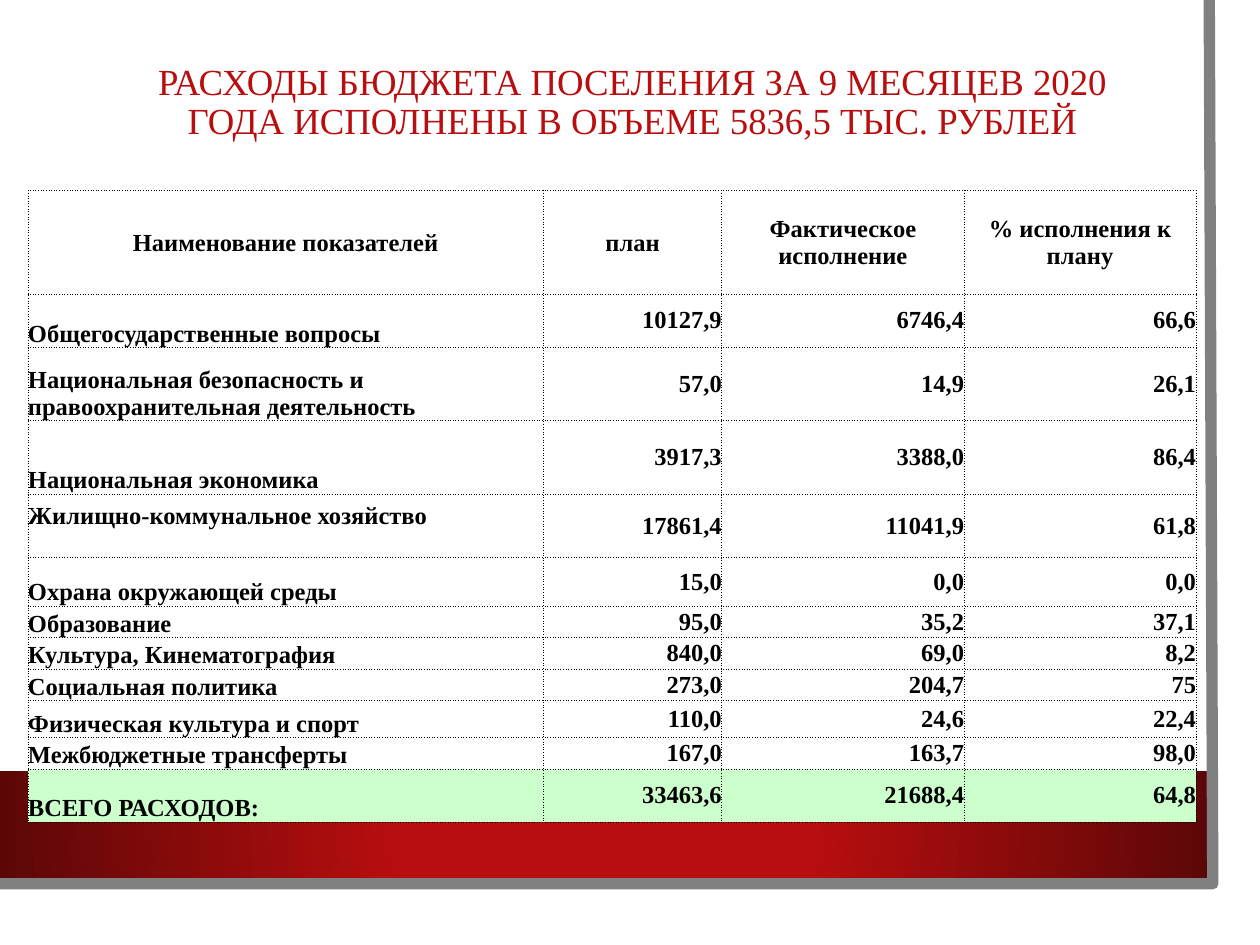
import pptx
import pptx.dml.color
import pptx.enum.shapes
import pptx.enum.text
import pptx.oxml
import pptx.oxml.ns
import pptx.util

Pt = pptx.util.Pt
ALIGN = pptx.enum.text.PP_ALIGN
ANCHOR = pptx.enum.text.MSO_ANCHOR
RECTANGLE = pptx.enum.shapes.MSO_SHAPE.RECTANGLE
NAMESPACE = pptx.oxml.ns.nsdecls("a")
FONT = "Times New Roman"
RED, DARK_RED, GREEN = "B80E0F", "5C0707", "CCFFCC"

TITLE = "РАСХОДЫ БЮДЖЕТА ПОСЕЛЕНИЯ ЗА 9 МЕСЯЦЕВ 2020 ГОДА ИСПОЛНЕНЫ В ОБЪЕМЕ 5836,5 ТЫС. РУБЛЕЙ"
COLUMN_WIDTHS = [294.5, 102, 138.5, 132.5]
HEADER_HEIGHT = 59
HEADER = ["Наименование показателей", "план", "Фактическое исполнение", "% исполнения к плану"]
EXPENSES = [
    (30.5, "Общегосударственные вопросы", "10127,9", "6746,4", "66,6"),
    (42, "Национальная безопасность и правоохранительная деятельность", "57,0", "14,9", "26,1"),
    (42, "Национальная экономика", "3917,3", "3388,0", "86,4"),
    (36, "Жилищно-коммунальное хозяйство", "17861,4", "11041,9", "61,8"),
    (28, "Охрана окружающей среды", "15,0", "0,0", "0,0"),
    (18, "Образование", "95,0", "35,2", "37,1"),
    (18, "Культура, Кинематография", "840,0", "69,0", "8,2"),
    (18, "Социальная политика", "273,0", "204,7", "75"),
    (21, "Физическая культура и спорт", "110,0", "24,6", "22,4"),
    (18, "Межбюджетные трансферты", "167,0", "163,7", "98,0"),
    (30.5, "ВСЕГО РАСХОДОВ:", "33463,6", "21688,4", "64,8"),
]
RAISED_LABEL = "Жилищно-коммунальное хозяйство"


def color(value):
    return pptx.dml.color.RGBColor.from_string(value)


def write(frame, text, size, text_color, align, bold=False):
    para = frame.paragraphs[0]
    para.alignment = align
    span = para.add_run()
    span.text = text
    span.font.name = FONT
    span.font.size = Pt(size)
    span.font.bold = bold
    span.font.color.rgb = color(text_color)
    return para


def set_margins(target, side, bottom):
    target.margin_left = target.margin_right = target.margin_top = Pt(side)
    target.margin_bottom = Pt(bottom)


def add_rectangle(page, left, top, width, height, fill):
    box = page.shapes.add_shape(RECTANGLE, Pt(left), Pt(top), Pt(width), Pt(height))
    box.shadow.inherit = False
    box.line.fill.background()
    box.fill.solid()
    box.fill.fore_color.rgb = color(fill)
    return box


def fill_radial(box, center, edge):
    """Replace the solid fill with a gradient that darkens away from the middle."""
    gradient = pptx.oxml.parse_xml(
        f'<a:gradFill {NAMESPACE} rotWithShape="1"><a:gsLst>'
        f'<a:gs pos="34000"><a:srgbClr val="{center}"/></a:gs>'
        f'<a:gs pos="100000"><a:srgbClr val="{edge}"/></a:gs></a:gsLst>'
        '<a:path path="circle"><a:fillToRect l="50000" t="50000" r="50000" b="50000"/></a:path>'
        '</a:gradFill>')
    properties = box.element.spPr
    solid = properties.find(pptx.oxml.ns.qn("a:solidFill"))
    properties.replace(solid, gradient)


def add_backdrop(page, left, top, width, height):
    add_rectangle(page, left, top, width, height, "FFFFFF")
    band = add_rectangle(page, left, top + 440.6, width - 16.6, 61.2, RED)
    fill_radial(band, RED, DARK_RED)
    builder = page.shapes.build_freeform(left + 691.2, top, scale=12700)
    builder.add_line_segments([(left + 692.6, top + 505.4), (left - 1.4, top + 504.7)], close=False)
    edge = builder.convert_to_shape()
    edge.shadow.inherit = False
    edge.fill.background()
    edge.line.color.rgb = color("808080")
    edge.line.width = Pt(6.5)


def add_title(page, left, top, width, height):
    box = page.shapes.add_textbox(Pt(left), Pt(top), Pt(width), Pt(height))
    frame = box.text_frame
    frame.word_wrap = True
    frame.vertical_anchor = ANCHOR.MIDDLE
    write(frame, TITLE, 21, RED, ALIGN.CENTER).line_spacing = 0.9


def style_cell(cell, fill=None):
    """Give a cell dotted borders on all sides and the given fill, or none."""
    for side in "LRTB":
        cell._tc.get_or_add_tcPr().append(pptx.oxml.parse_xml(
            f'<a:ln{side} {NAMESPACE} w="6350"><a:solidFill><a:srgbClr val="000000"/></a:solidFill>'
            f'<a:prstDash val="sysDot"/></a:ln{side}>'))
    if fill:
        cell.fill.solid()
        cell.fill.fore_color.rgb = color(fill)
    else:
        cell.fill.background()


def add_expense_table(page, left, top):
    heights = [HEADER_HEIGHT] + [expense[0] for expense in EXPENSES]
    table = page.shapes.add_table(len(heights), len(COLUMN_WIDTHS), Pt(left), Pt(top),
                                  Pt(sum(COLUMN_WIDTHS)), Pt(sum(heights))).table
    table.first_row = table.horz_banding = False
    for column, width in zip(table.columns, COLUMN_WIDTHS):
        column.width = Pt(width)
    for row, height in zip(table.rows, heights):
        row.height = Pt(height)

    for cell, text in zip(table.rows[0].cells, HEADER):
        style_cell(cell)
        set_margins(cell, 0.72, 0)
        cell.vertical_anchor = ANCHOR.MIDDLE
        write(cell.text_frame, text, 14, "000000", ALIGN.CENTER, bold=True)

    for number, (_, *texts) in enumerate(EXPENSES, start=1):
        fill = GREEN if number == len(EXPENSES) else None
        for index, text in enumerate(texts):
            cell = table.cell(number, index)
            style_cell(cell, fill)
            set_margins(cell, 0, 15.5 if text == RAISED_LABEL else 0)
            cell.vertical_anchor = ANCHOR.MIDDLE if index else ANCHOR.BOTTOM
            align = ALIGN.RIGHT if index else ALIGN.LEFT
            write(cell.text_frame, text, 14, "000000", align, bold=True)


def main():
    deck = pptx.Presentation()
    deck.slide_width, deck.slide_height = Pt(720), Pt(540)
    page = deck.slides.add_slide(deck.slide_layouts[6])
    add_backdrop(page, 0, 0, 707.8, 523.4)
    add_title(page, 64.8, 19.4, 593.3, 79.2)
    add_expense_table(page, 16, 109)
    deck.save("out.pptx")


if __name__ == "__main__":
    main()
